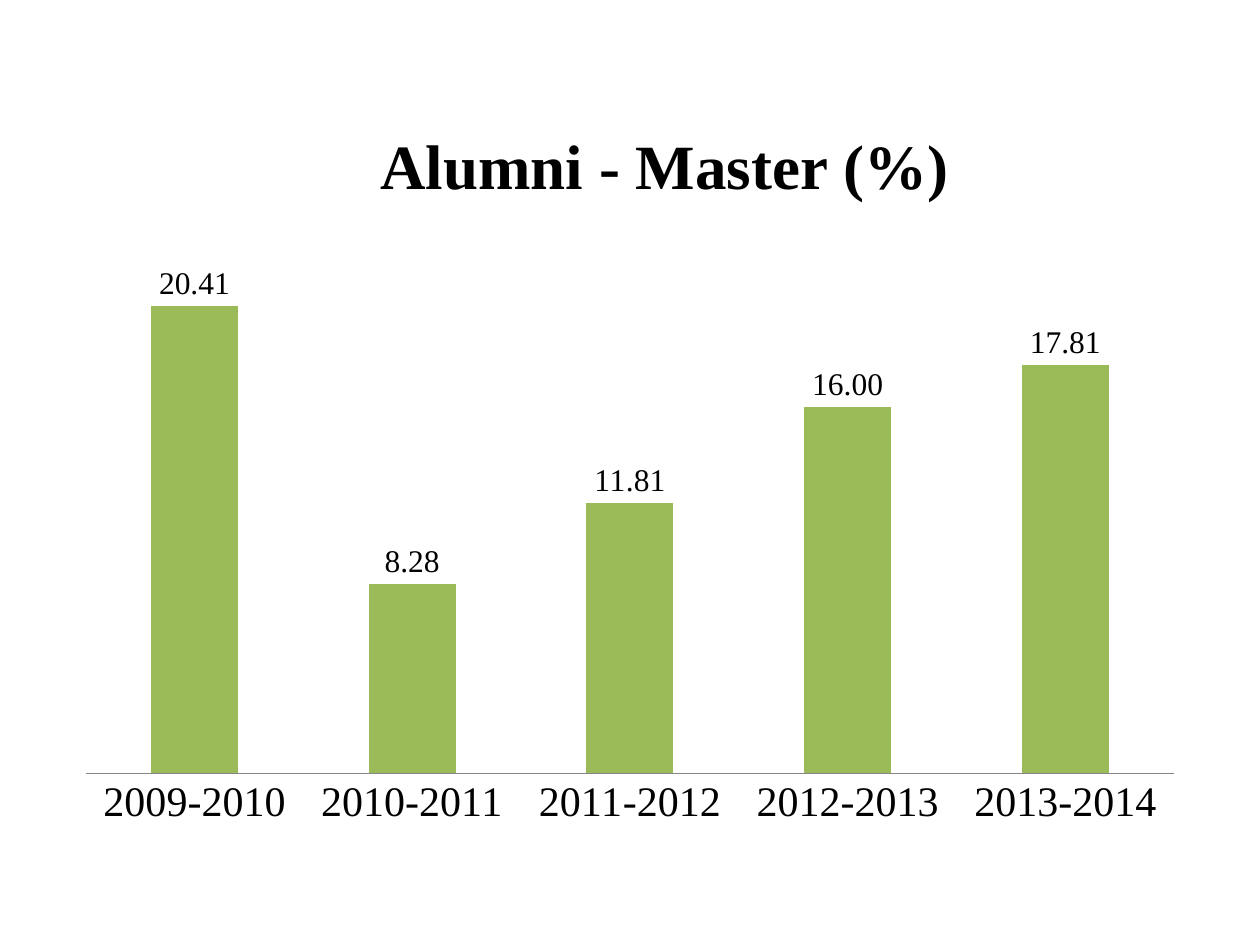
from lxml.etree import SubElement
from pptx import Presentation
from pptx.chart.data import CategoryChartData
from pptx.dml.color import RGBColor
from pptx.enum.chart import XL_CHART_TYPE, XL_LABEL_POSITION, XL_TICK_MARK
from pptx.oxml.ns import qn
from pptx.util import Inches, Pt

WIDTH, HEIGHT = 10, 7.5
COLOURS = {"text": "000000", "bar": "9BBB59", "axis": "868686", "page": "FFFFFF"}
SERIF = "Times New Roman"
ALUMNI = {
    "2009-2010": 20.41,
    "2010-2011": 8.28,
    "2011-2012": 11.81,
    "2012-2013": 16,
    "2013-2014": 17.81,
}


def colour(name):
    return RGBColor.from_string(COLOURS[name])


def style_font(font, size, name=SERIF, bold=False):
    font.name, font.size, font.bold = name, Pt(size), bold
    font.color.rgb = colour("text")


def place(element, index, **settings):
    """Give a chart part a manual layout, in shares of the chart's size."""
    for old in element.findall(qn("c:layout")):
        element.remove(old)
    layout = SubElement(element, qn("c:layout"))
    element.insert(index, layout)
    manual = SubElement(layout, qn("c:manualLayout"))
    for tag, value in settings.items():
        SubElement(manual, qn(f"c:{tag}")).set("val", str(value))


def add_column_chart(page):
    data = CategoryChartData(number_format="0.00")
    data.categories = list(ALUMNI)
    data.add_series("Series 1", list(ALUMNI.values()))
    frame = page.shapes.add_chart(
        XL_CHART_TYPE.COLUMN_CLUSTERED,
        Inches(0.05 * WIDTH), Inches(0.47),
        Inches(0.9 * WIDTH), Inches(6.23), data,
    )
    chart = frame.chart
    chart.has_legend = False
    style_font(chart.font, 10, "Calibri")
    return chart


def add_title(chart, text):
    chart.has_title = True
    span = chart.chart_title.text_frame.paragraphs[0].add_run()
    span.text = text
    style_font(span.font, 36, bold=True)
    place(chart.chart_title._element, 1, xMode="edge", yMode="edge", x=0.27, y=0.07)


def style_axes(chart):
    years = chart.category_axis
    years.major_tick_mark = years.minor_tick_mark = XL_TICK_MARK.NONE
    years.has_major_gridlines = False
    years.format.line.color.rgb = colour("axis")
    years.format.line.width = Pt(0.75)
    style_font(years.tick_labels.font, 24)

    values = chart.value_axis
    values.minimum_scale, values.maximum_scale = 0, 25
    values.has_major_gridlines = False
    values.visible = False


def style_columns(chart):
    plot = chart.plots[0]
    plot.gap_width, plot.overlap = 150, -25
    plot.vary_by_categories = False
    fill = plot.series[0].format.fill
    fill.solid()
    fill.fore_color.rgb = colour("bar")

    labels = plot.series[0].data_labels
    labels.show_value = True
    labels.number_format, labels.number_format_is_linked = "0.00", False
    labels.position = XL_LABEL_POSITION.OUTSIDE_END
    style_font(labels.font, 18)

    area = chart._chartSpace.chart.plotArea
    place(area, 0, layoutTarget="inner", xMode="edge", yMode="edge",
          x=0.02, y=0.18, w=0.96, h=0.73)


def main():
    deck = Presentation()
    deck.slide_width, deck.slide_height = Inches(WIDTH), Inches(HEIGHT)
    page = deck.slides.add_slide(deck.slide_layouts[6])
    page.background.fill.solid()
    page.background.fill.fore_color.rgb = colour("page")

    # Chart of alumni shares by school year
    chart = add_column_chart(page)
    add_title(chart, "Alumni - Master (%)")
    style_axes(chart)
    style_columns(chart)

    deck.save("out.pptx")


if __name__ == "__main__":
    main()
